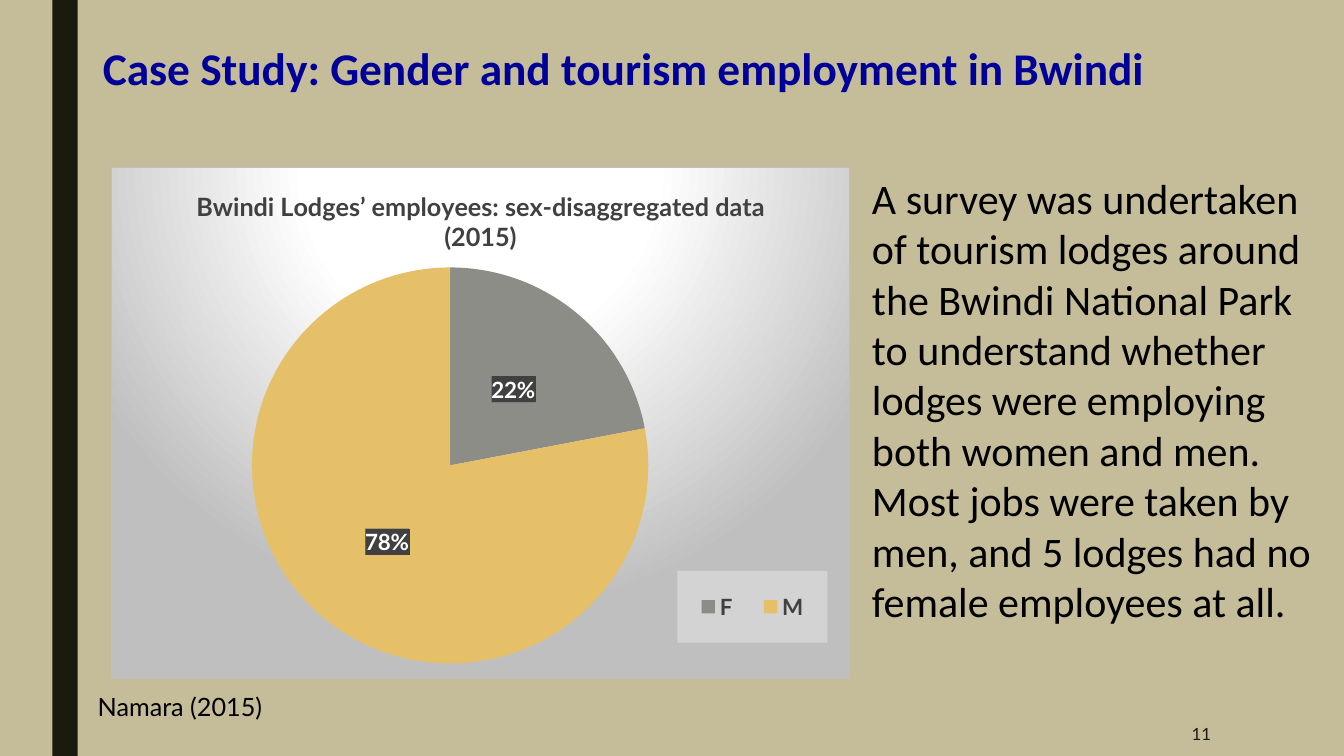
from lxml import etree
from pptx import Presentation
from pptx.chart.data import CategoryChartData
from pptx.dml.color import RGBColor
from pptx.enum.chart import XL_CHART_TYPE, XL_LABEL_POSITION, XL_LEGEND_POSITION
from pptx.enum.shapes import MSO_SHAPE
from pptx.enum.text import MSO_ANCHOR, PP_ALIGN
from pptx.oxml.ns import qn
from pptx.util import Inches, Pt

PIE, RECTANGLE = XL_CHART_TYPE.PIE, MSO_SHAPE.RECTANGLE
LABEL_CENTER, LEGEND_RIGHT = XL_LABEL_POSITION.CENTER, XL_LEGEND_POSITION.RIGHT
TOP, MIDDLE = MSO_ANCHOR.TOP, MSO_ANCHOR.MIDDLE
LEFT, CENTER, RIGHT = PP_ALIGN.LEFT, PP_ALIGN.CENTER, PP_ALIGN.RIGHT

# Content
TITLE = "Case Study: Gender and tourism employment in Bwindi"
CHART_TITLE = "Bwindi Lodges’ employees: sex-disaggregated data (2015)"
EMPLOYEES = {"F": 22, "M": 78}
SURVEY = (
    "A survey was undertaken of tourism lodges around the Bwindi National Park "
    "to understand whether lodges were employing both women and men. Most jobs "
    "were taken by men, and 5 lodges had no female employees at all."
)
CITATION = "Namara (2015)"
PAGE_NUMBER = "11"

COLORS = {
    "background": "C5BD99", "band": "191B0E", "title": "000099",
    "text": "000000", "chart_text": "404040", "label_text": "FFFFFF",
    "F": "8C8D86", "M": "E6C069", "chart_center": "FFFFFF", "chart_edge": "BFBFBF",
    "legend": "D3D3D3", "label_dark": "404040", "label_light": "666666",
}
# Boxes: left, top, width, height in inches
BAND_BOX = (0.52, 0, 0.25, 7.5)
TITLE_BOX = (0.92, 0.41, 11.18, 0.95)
CHART_BOX = (1.1, 1.66, 7.33, 5.08)
SURVEY_BOX = (8.55, 1.66, 4.58, 4.64)
CITATION_BOX = (0.87, 6.81, 10.91, 0.4)
NUMBER_BOX = (10.36, 7.06, 1.75, 0.44)
# Parts of the chart, as fractions of its size
PIE_AREA = (0.19, 0.195, 0.538, 0.775)
LEGEND_AREA = (0.767, 0.789, 0.203, 0.14)

NS = ('xmlns:c="http://schemas.openxmlformats.org/drawingml/2006/chart" '
      'xmlns:a="http://schemas.openxmlformats.org/drawingml/2006/main"')
NO_LINE = "<a:ln><a:noFill/></a:ln>"


def color_xml(name):
    return f'<a:srgbClr val="{COLORS[name]}"/>'


CHART_FILL = f"""<a:gradFill><a:gsLst>
<a:gs pos="0">{color_xml("chart_center")}</a:gs>
<a:gs pos="39000">{color_xml("chart_center")}</a:gs>
<a:gs pos="100000">{color_xml("chart_edge")}</a:gs></a:gsLst>
<a:path path="circle"><a:fillToRect l="50000" t="-80000" r="50000" b="180000"/></a:path>
</a:gradFill><a:ln w="9525"><a:solidFill>{color_xml("chart_edge")}</a:solidFill></a:ln>"""
LEGEND_FILL = f'<a:solidFill>{color_xml("legend")}</a:solidFill>{NO_LINE}'
LABEL_FILL = f"""<a:pattFill prst="dkVert"><a:fgClr>{color_xml("label_dark")}</a:fgClr>
<a:bgClr>{color_xml("label_light")}</a:bgClr></a:pattFill>{NO_LINE}"""


def rgb(name):
    return RGBColor.from_string(COLORS[name])


def inches(box):
    return [Inches(length) for length in box]


def set_font(font, size, color, bold=False, name="Lato"):
    font.size, font.bold, font.name = Pt(size), bold, name
    font.color.rgb = rgb(color)


def write(frame, text, size, color="text", bold=False, name="Lato",
          align=LEFT, anchor=TOP, spacing=None):
    frame.word_wrap = True
    frame.vertical_anchor = anchor
    paragraph = frame.paragraphs[0]
    paragraph.alignment = align
    paragraph.line_spacing = spacing
    run = paragraph.add_run()
    run.text = text
    set_font(run.font, size, color, bold, name)


def shape_format(fill):
    return etree.fromstring(f"<c:spPr {NS}>{fill}</c:spPr>")


def manual_layout(area, inner=False):
    target = '<c:layoutTarget val="inner"/>' if inner else ""
    modes = '<c:xMode val="edge"/><c:yMode val="edge"/>'
    sizes = "".join(f'<c:{key} val="{value}"/>' for key, value in zip("xywh", area))
    return etree.fromstring(
        f"<c:layout {NS}><c:manualLayout>{target}{modes}{sizes}</c:manualLayout></c:layout>")


def drop_layout(parent):
    for layout in parent.findall(qn("c:layout")):
        parent.remove(layout)


prs = Presentation()
prs.slide_width, prs.slide_height = Inches(13.33), Inches(7.5)
slide = prs.slides.add_slide(prs.slide_layouts[5])
slide.background.fill.solid()
slide.background.fill.fore_color.rgb = rgb("background")

# Side band
band = slide.shapes.add_shape(RECTANGLE, *inches(BAND_BOX))
band.shadow.inherit = False
band.fill.solid()
band.fill.fore_color.rgb = rgb("band")
band.line.fill.background()

# Title
title = slide.shapes.title
title.left, title.top, title.width, title.height = inches(TITLE_BOX)
write(title.text_frame, TITLE, 32.4, color="title", bold=True, name="Calibri", spacing=0.89)

# Pie chart
data = CategoryChartData()
data.categories = list(EMPLOYEES)
data.add_series("Series 1", list(EMPLOYEES.values()))
chart = slide.shapes.add_chart(PIE, *inches(CHART_BOX), data).chart
set_font(chart.font, 10, "text")
chart.has_title = True
write(chart.chart_title.text_frame, CHART_TITLE, 18, color="chart_text", bold=True, align=CENTER)
chart.chart_title.include_in_layout = False

pie = chart.plots[0]
pie.vary_by_categories = True
for index, sex in enumerate(EMPLOYEES):
    slice_fill = pie.series[0].points[index].format.fill
    slice_fill.solid()
    slice_fill.fore_color.rgb = rgb(sex)

# Percentage labels
labels = pie.series[0].data_labels
labels.show_percentage, labels.show_value = True, False
labels.number_format, labels.number_format_is_linked = "0%", False
labels.position = LABEL_CENTER
set_font(labels.font, 16, "label_text", bold=True)
chart_space = chart.element
label_format = chart_space.find(".//" + qn("c:ser") + "/" + qn("c:dLbls"))
label_format.find(qn("c:numFmt")).addnext(shape_format(LABEL_FILL))

# Legend
chart.has_legend = True
chart.legend.position = LEGEND_RIGHT
chart.legend.include_in_layout = False
set_font(chart.legend.font, 16, "chart_text", bold=True)
legend = chart_space.find(".//" + qn("c:legend"))
drop_layout(legend)
legend.find(qn("c:legendPos")).addnext(manual_layout(LEGEND_AREA))
legend.find(qn("c:overlay")).addnext(shape_format(LEGEND_FILL))

# Pie position and chart background
plot_area = chart_space.find(".//" + qn("c:plotArea"))
drop_layout(plot_area)
plot_area.insert(0, manual_layout(PIE_AREA, inner=True))
chart_space.find(qn("c:chart")).addnext(shape_format(CHART_FILL))

# Citation, page number and survey text
for box, text, style in (
    (CITATION_BOX, CITATION, {"size": 18}),
    (NUMBER_BOX, PAGE_NUMBER, {"size": 12, "color": "band", "align": RIGHT, "anchor": MIDDLE}),
    (SURVEY_BOX, SURVEY, {"size": 30, "name": "Calibri"}),
):
    write(slide.shapes.add_textbox(*inches(box)).text_frame, text, **style)

prs.save("out.pptx")
